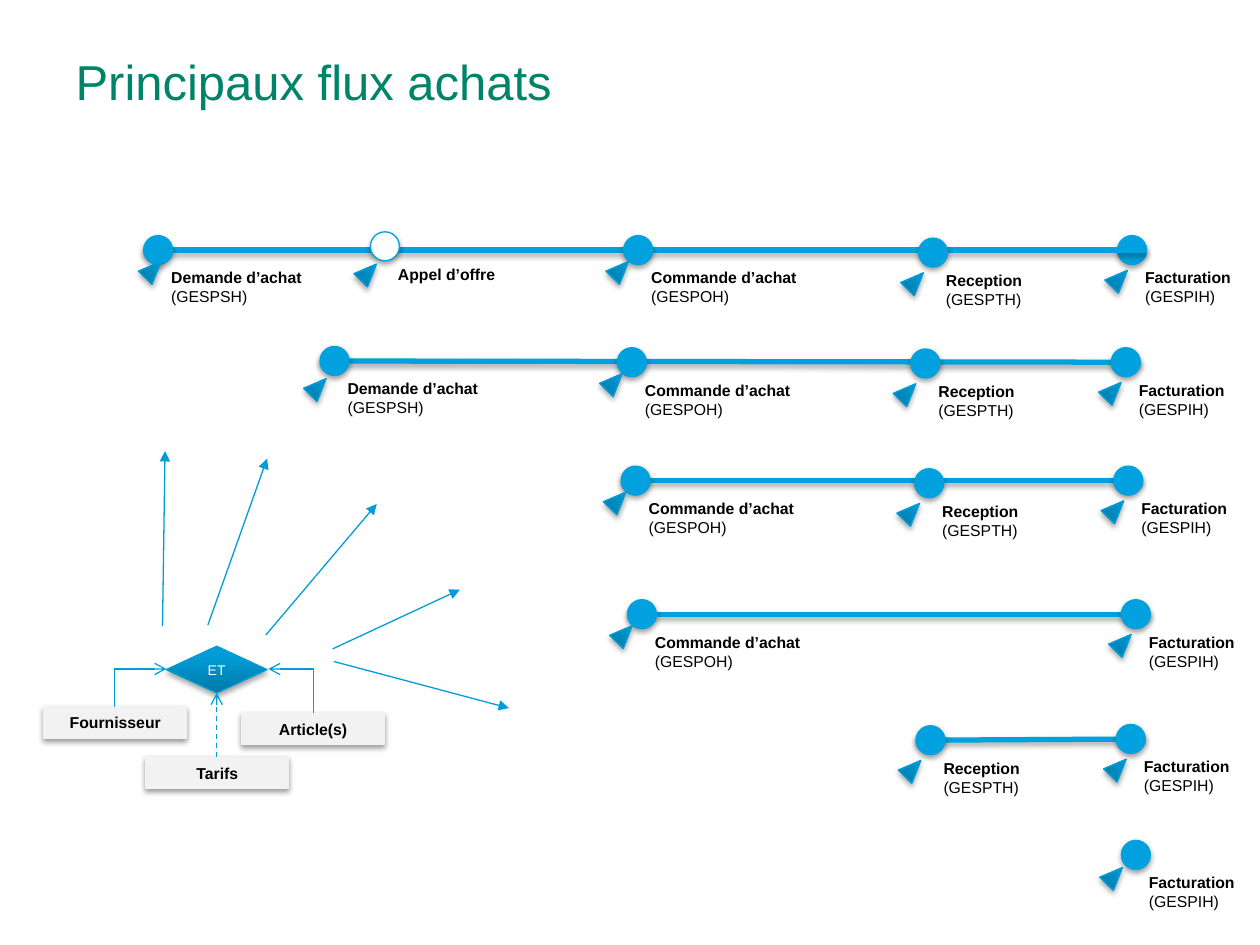
import copy
from dataclasses import dataclass
from typing import NamedTuple

import lxml.etree
import pptx
import pptx.dml.color
import pptx.enum.dml
import pptx.enum.shapes
import pptx.enum.text
import pptx.oxml.ns
import pptx.util

Inches = pptx.util.Inches
RGB = pptx.dml.color.RGBColor
SHAPE = pptx.enum.shapes.MSO_SHAPE
CONNECTOR = pptx.enum.shapes.MSO_CONNECTOR
ALIGN = pptx.enum.text.PP_ALIGN
qn = pptx.oxml.ns.qn


class Shadow(NamedTuple):
    alpha: int
    blur: float
    distance: float


@dataclass(frozen=True)
class Theme:
    font: str = "Arial"
    title: RGB = RGB(0x00, 0x84, 0x69)
    flow: RGB = RGB(0x00, 0xA1, 0xDE)
    accent: RGB = RGB(0x00, 0x9D, 0xD9)
    gradient: tuple = ((0, RGB(0x00, 0x78, 0xA6)), (0.8, RGB(0x00, 0x9C, 0xD7)),
                       (1, RGB(0x00, 0x9D, 0xD8)))
    panel: RGB = RGB(0xF2, 0xF2, 0xF2)
    text: RGB = RGB(0, 0, 0)
    white: RGB = RGB(255, 255, 255)
    title_size: int = 28
    label_size: int = 9
    gate_size: int = 8
    flow_width: float = 3
    thin_width: float = 0.75
    deep: Shadow = Shadow(35, 3.15, 1.8)
    soft: Shadow = Shadow(38, 3.15, 1.57)


class Kind(NamedTuple):
    label: str
    width: float
    height: float
    marker: tuple


class Stage(NamedTuple):
    kind: Kind
    x: float
    y: float
    marker: tuple = ()
    hollow: bool = False
    under_line: bool = False


THEME = Theme()
DOT = 0.23
LABEL_DX, LABEL_DY = 0.12, 0.21
MARKER_W, MARKER_H, MARKER_ANGLE = 0.15, 0.18, 44.3
BOX_W, BOX_H = 1.13, 0.25

REQUEST = Kind("Demande d’achat\v(GESPSH)", 1.25, 0.4, (-0.09, 0.23))
TENDER = Kind("Appel d’offre", 0.98, 0.25, (-0.09, 0.23))
ORDER = Kind("Commande d’achat\v(GESPOH)", 1.37, 0.4, (-0.1, 0.18))
RECEIPT = Kind("Reception\n(GESPTH)", 0.83, 0.4, (-0.1, 0.25))
INVOICE = Kind("Facturation\n(GESPIH)", 0.9, 0.4, (-0.06, 0.25))

FLOWS = [
    [Stage(REQUEST, 1.14, 1.87, marker=(0, 0.18)), Stage(TENDER, 2.94, 1.84, hollow=True),
     Stage(ORDER, 4.95, 1.87), Stage(RECEIPT, 7.29, 1.89),
     Stage(INVOICE, 8.87, 1.87, under_line=True)],
    [Stage(REQUEST, 2.54, 2.75), Stage(ORDER, 4.9, 2.76), Stage(RECEIPT, 7.23, 2.77),
     Stage(INVOICE, 8.82, 2.76)],
    [Stage(ORDER, 4.93, 3.7), Stage(RECEIPT, 7.26, 3.72), Stage(INVOICE, 8.84, 3.7)],
    [Stage(ORDER, 4.98, 4.76), Stage(INVOICE, 8.9, 4.76)],
    [Stage(RECEIPT, 7.27, 5.76), Stage(INVOICE, 8.86, 5.75)],
    [Stage(INVOICE, 8.9, 6.67, marker=(-0.13, 0.19))],
]
INPUTS = [("Fournisseur", 0.35, 5.61), ("Article(s)", 1.92, 5.66), ("Tarifs", 1.16, 6.01)]
ELBOWS = [((0.91, 5.61), (1.32, 5.31)), ((2.49, 5.66), (2.13, 5.31))]
RAYS = [((1.29, 4.97), (1.31, 3.58)), ((1.65, 4.96), (2.12, 3.64)),
        ((2.11, 5.04), (2.99, 4)), ((2.64, 5.15), (3.65, 4.68)),
        ((2.65, 5.25), (4.04, 5.62))]


def set_shadow(s, shadow: Shadow | None) -> None:
    effects = lxml.etree.SubElement(s._element.spPr, qn("a:effectLst"))
    if shadow is None:
        return
    outer = lxml.etree.SubElement(
        effects, qn("a:outerShdw"), blurRad=str(pptx.util.Pt(shadow.blur)),
        dist=str(pptx.util.Pt(shadow.distance)), dir="5400000", rotWithShape="0")
    color = lxml.etree.SubElement(outer, qn("a:srgbClr"), val="000000")
    lxml.etree.SubElement(color, qn("a:alpha"), val=str(shadow.alpha * 1000))


def set_gradient(s) -> None:
    s.fill.gradient()
    s.fill.gradient_angle = 90
    stops = s._element.spPr.find(".//" + qn("a:gsLst"))
    stops.append(copy.deepcopy(stops[-1]))
    for stop, (position, color) in zip(s.fill.gradient_stops, THEME.gradient):
        stop.position = position
        stop.color.rgb = color


def style_run(r, size: float, color: RGB, bold: bool = False) -> None:
    r.font.name = THEME.font
    r.font.size = pptx.util.Pt(size)
    r.font.color.rgb = color
    r.font.bold = bold


def add_shape(slide, preset, x: float, y: float, w: float, h: float,
              fill: RGB | None, line: RGB, shadow: Shadow):
    s = slide.shapes.add_shape(preset, Inches(x), Inches(y), Inches(w), Inches(h))
    if fill is None:
        set_gradient(s)
    else:
        s.fill.solid()
        s.fill.fore_color.rgb = fill
    s.line.color.rgb = line
    s.line.width = pptx.util.Pt(THEME.thin_width)
    set_shadow(s, shadow)
    return s


def add_line(slide, start: tuple, end: tuple, color: RGB, width: float,
             tail: str = "", shadow: Shadow | None = None, dashed: bool = False,
             kind=CONNECTOR.STRAIGHT):
    s = slide.shapes.add_connector(kind, *map(Inches, (*start, *end)))
    s.line.color.rgb = color
    s.line.width = pptx.util.Pt(width)
    if dashed:
        s.line.dash_style = pptx.enum.dml.MSO_LINE.DASH
    if tail:
        lxml.etree.SubElement(s._element.spPr.find(qn("a:ln")), qn("a:tailEnd"), type=tail)
    set_shadow(s, shadow)
    return s


def add_elbow(slide, start: tuple, end: tuple) -> None:
    cx, cy = (start[0] + end[0]) / 2, (start[1] + end[1]) / 2
    dx, dy = abs(end[0] - start[0]) / 2, abs(end[1] - start[1]) / 2
    s = add_line(slide, (cx - dy, cy - dx), (cx + dy, cy + dx), THEME.accent,
                 THEME.thin_width, "arrow", kind=CONNECTOR.ELBOW)
    spPr = s._element.spPr
    spPr.find(qn("a:prstGeom")).set("prst", "bentConnector2")
    xfrm = spPr.find(qn("a:xfrm"))
    xfrm.set("flipV", "1")
    if end[0] > start[0]:
        xfrm.set("flipH", "1")
        xfrm.set("rot", "5400000")
    else:
        xfrm.set("rot", "16200000")


def add_dot(slide, stage: Stage) -> None:
    fill = THEME.white if stage.hollow else THEME.flow
    add_shape(slide, SHAPE.OVAL, stage.x, stage.y, DOT, DOT, fill, THEME.flow, THEME.soft)


def add_label(slide, stage: Stage) -> None:
    kind = stage.kind
    s = slide.shapes.add_textbox(Inches(stage.x + LABEL_DX), Inches(stage.y + LABEL_DY),
                                 Inches(kind.width), Inches(kind.height))
    tf = s.text_frame
    tf.word_wrap = False
    tf.auto_size = pptx.enum.text.MSO_AUTO_SIZE.SHAPE_TO_FIT_TEXT
    tf.text = kind.label
    runs = [r for p in tf.paragraphs for r in p.runs]
    for i, r in enumerate(runs):
        style_run(r, THEME.label_size, THEME.text, bold=i == 0)
    for br in s._element.iter(qn("a:br")):
        br.append(copy.deepcopy(runs[0]._r.rPr))


def add_flow(slide, stages: list[Stage]) -> None:
    first, last = stages[0], stages[-1]
    for stage in stages:
        if stage.under_line:
            add_dot(slide, stage)
    if len(stages) > 1:
        add_line(slide, (first.x, first.y + DOT / 2), (last.x + DOT, last.y + DOT / 2),
                 THEME.flow, THEME.flow_width, shadow=THEME.deep)
    for stage in stages:
        add_label(slide, stage)
        if not stage.under_line:
            add_dot(slide, stage)
        dx, dy = stage.marker or stage.kind.marker
        s = add_shape(slide, SHAPE.ISOSCELES_TRIANGLE, stage.x + dx, stage.y + dy,
                      MARKER_W, MARKER_H, None, THEME.accent, THEME.deep)
        s.rotation = MARKER_ANGLE


def set_centred_text(s, text: str, size: float, color: RGB, bold: bool) -> None:
    tf = s.text_frame
    tf.text = text
    tf.vertical_anchor = pptx.enum.text.MSO_ANCHOR.MIDDLE
    p = tf.paragraphs[0]
    p.alignment = ALIGN.CENTER
    style_run(p.runs[0], size, color, bold)


def add_inputs(slide) -> None:
    for text, x, y in INPUTS:
        s = add_shape(slide, SHAPE.RECTANGLE, x, y, BOX_W, BOX_H,
                      THEME.panel, THEME.panel, THEME.soft)
        set_centred_text(s, text, THEME.label_size, THEME.text, True)
    gate = add_shape(slide, SHAPE.FLOWCHART_DECISION, 1.32, 5.13, 0.8, 0.37,
                     None, THEME.accent, THEME.deep)
    set_centred_text(gate, "ET", THEME.gate_size, THEME.white, False)
    for start, end in ELBOWS:
        add_elbow(slide, start, end)
    add_line(slide, (1.72, 6.01), (1.72, 5.5), THEME.accent, THEME.thin_width,
             "arrow", dashed=True)
    for start, end in RAYS:
        add_line(slide, start, end, THEME.accent, THEME.thin_width, "triangle")


def add_title(slide, text: str) -> None:
    s = slide.shapes.title
    s.left, s.top, s.width, s.height = map(Inches, (0.5, 0.33, 9, 0.62))
    tf = s.text_frame
    tf.text = text
    tf.vertical_anchor = pptx.enum.text.MSO_ANCHOR.MIDDLE
    p = tf.paragraphs[0]
    p.alignment = ALIGN.LEFT
    style_run(p.runs[0], THEME.title_size, THEME.title)


def main() -> None:
    prs = pptx.Presentation()
    prs.slide_width, prs.slide_height = Inches(10), Inches(7.5)
    slide = prs.slides.add_slide(prs.slide_layouts[5])
    add_title(slide, "Principaux flux achats")
    for stages in FLOWS:
        add_flow(slide, stages)
    add_inputs(slide)
    prs.save("out.pptx")


if __name__ == "__main__":
    main()
